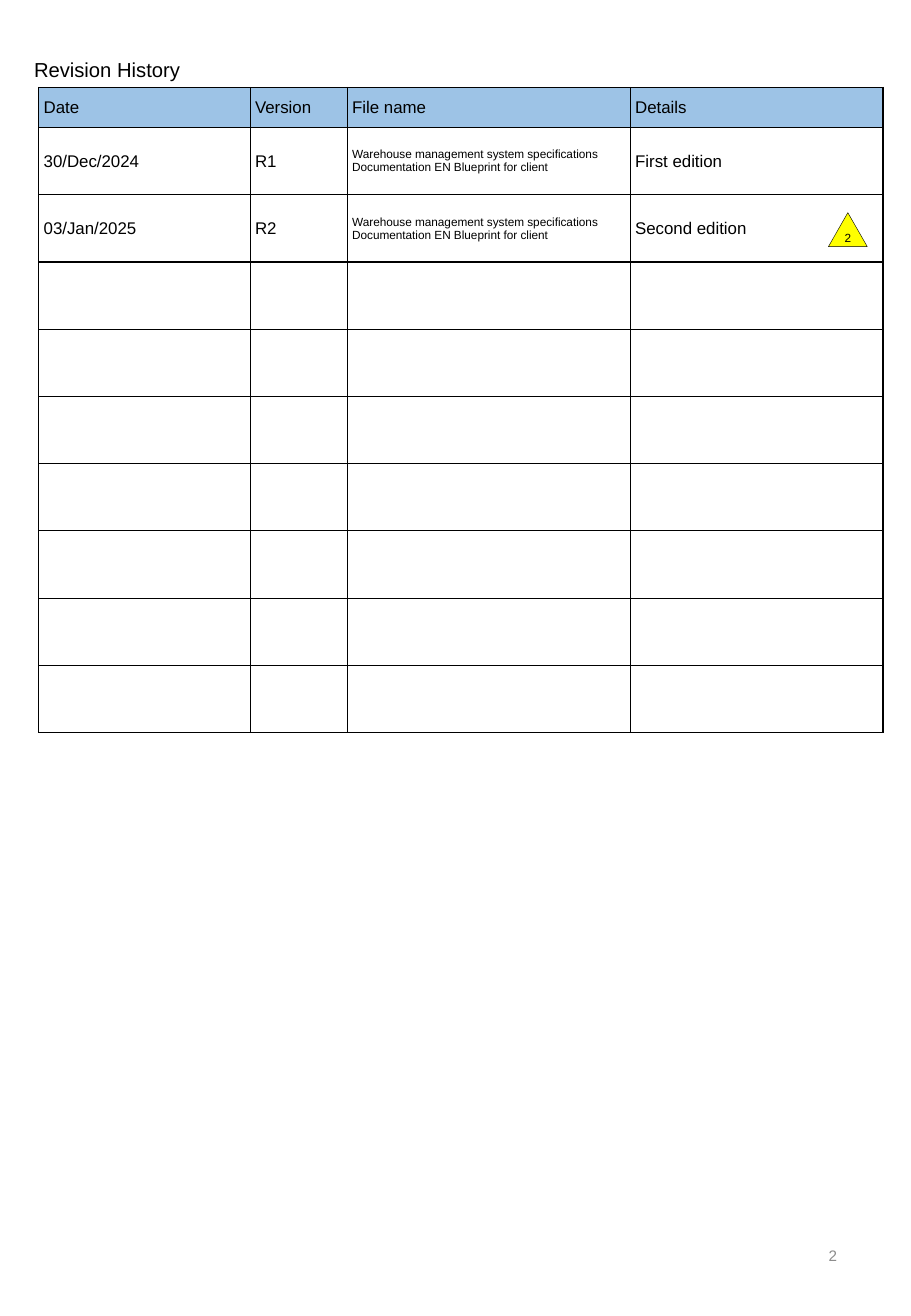
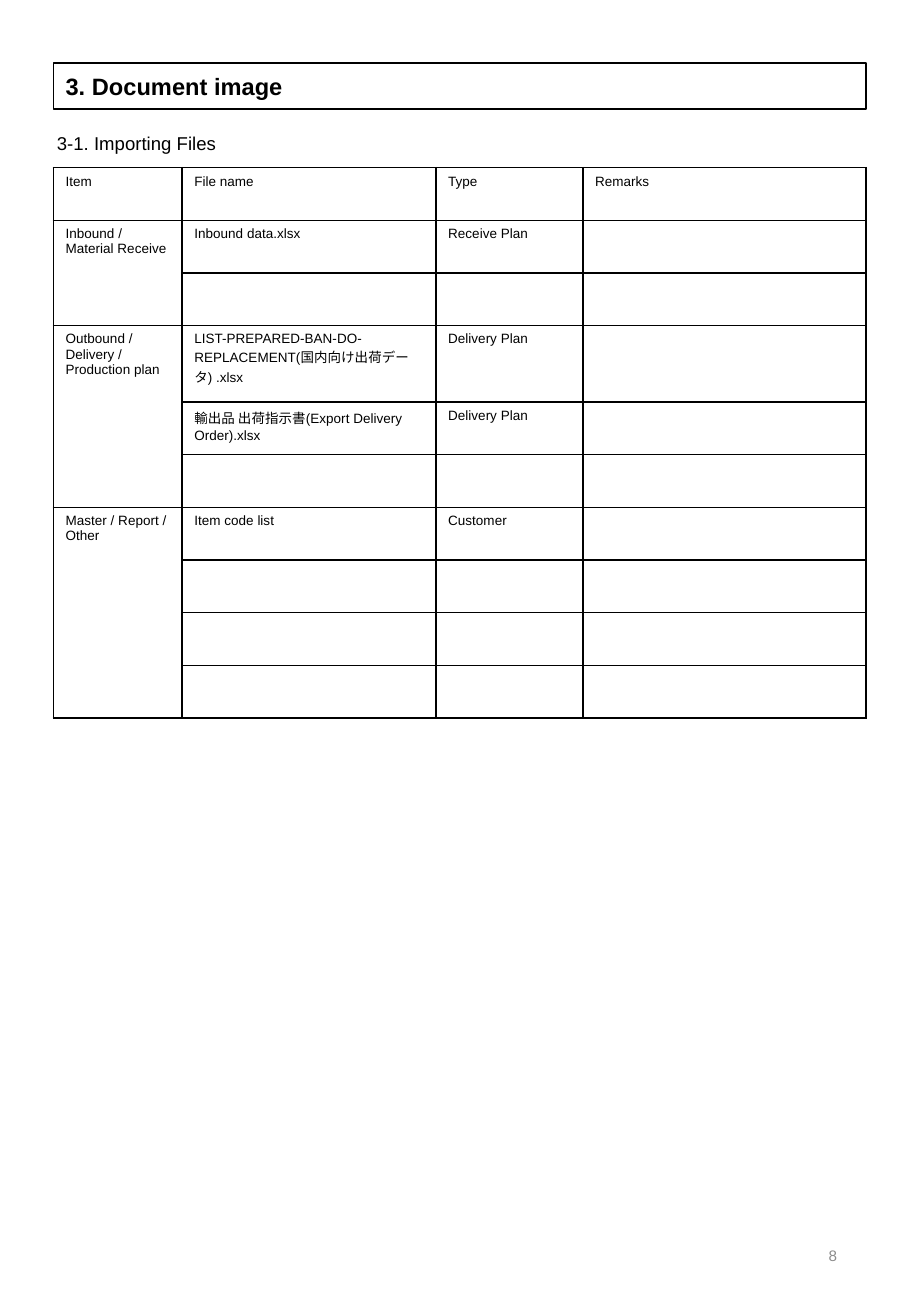
from pptx import Presentation
from pptx.dml.color import RGBColor
from pptx.enum.shapes import MSO_SHAPE
from pptx.enum.text import MSO_ANCHOR, MSO_AUTO_SIZE, PP_ALIGN
from pptx.oxml import parse_xml
from pptx.oxml.ns import nsdecls
from pptx.util import Inches, Pt

TRIANGLE = MSO_SHAPE.ISOSCELES_TRIANGLE
TOP, MIDDLE = MSO_ANCHOR.TOP, MSO_ANCHOR.MIDDLE
LEFT, CENTER, RIGHT = PP_ALIGN.LEFT, PP_ALIGN.CENTER, PP_ALIGN.RIGHT
NO_AUTOFIT = MSO_AUTO_SIZE.NONE

FONT = "Arial"
BLACK, GRAY, BLUE, YELLOW = "000000", "8C8C8C", "9DC3E6", "FFFF00"
TITLE_ONLY = 5
DEFAULT_MARGINS = (0.1, 0.05, 0.1, 0.05)
PAGE_NUMBER_BOX = (5.3, 10.04, 1.69, 0.58)

FILE_NAME = "Warehouse management system specifications Documentation EN Blueprint for client"
REVISIONS = [
    ("Date", "Version", "File name", "Details"),
    ("30/Dec/2024", "R1", FILE_NAME, "First edition"),
    ("03/Jan/2025", "R2", FILE_NAME, "Second edition"),
]
REVISION_ROWS = 10
IMPORT_HEADERS = ("Item", "File name", "Type", "Remarks")
IMPORT_GROUPS = [
    ("Inbound / Material Receive", 2, [("Inbound data.xlsx", "Receive Plan")]),
    ("Outbound / Delivery / Production plan", 3, [
        ("LIST-PREPARED-BAN-DO-REPLACEMENT(国内向け出荷データ) .xlsx", "Delivery Plan"),
        ("輸出品 出荷指示書(Export Delivery Order).xlsx", "Delivery Plan"),
    ]),
    ("Master / Report / Other", 4, [("Item code list", "Customer")]),
]
TALL_ROW = 3


def color(value):
    """Return the colour for a hex string."""
    return RGBColor.from_string(value)


def inches(values):
    """Convert numbers to lengths."""
    return [Inches(value) for value in values]


def place(shape, box):
    """Move and size a shape."""
    shape.left, shape.top, shape.width, shape.height = inches(box)


def write(frame, text, size=10, font_color=BLACK, bold=False, align=LEFT):
    """Write one formatted paragraph into a text frame."""
    paragraph = frame.paragraphs[0]
    paragraph.alignment = align
    run = paragraph.add_run()
    run.text = text
    run.font.name, run.font.size, run.font.bold = FONT, Pt(size), bold
    run.font.color.rgb = color(font_color)


def set_margins(target, margins):
    """Set the inner margins of a text frame or cell."""
    (target.margin_left, target.margin_top,
     target.margin_right, target.margin_bottom) = inches(margins)


def write_box(shape, text, margins=DEFAULT_MARGINS, anchor=MIDDLE, **text_format):
    """Lay out and write the text of a shape."""
    frame = shape.text_frame
    frame.word_wrap = True
    frame.auto_size = NO_AUTOFIT
    frame.vertical_anchor = anchor
    set_margins(frame, margins)
    write(frame, text, **text_format)


def add_text(slide, box, text, **text_format):
    """Add a text box."""
    write_box(slide.shapes.add_textbox(*inches(box)), text, **text_format)


def add_page(presentation, title, title_box, page_number, **title_format):
    """Add a slide with its title and page number."""
    slide = presentation.slides.add_slide(presentation.slide_layouts[TITLE_ONLY])
    place(slide.shapes.title, title_box)
    write_box(slide.shapes.title, title, **title_format)
    add_text(slide, PAGE_NUMBER_BOX, page_number, size=9, font_color=GRAY, align=RIGHT)
    return slide


def set_borders(cell, width):
    """Draw black lines on all sides of a cell."""
    properties = cell._tc.get_or_add_tcPr()
    for side in "LRTB":
        properties.append(parse_xml(
            f'<a:ln{side} {nsdecls("a")} w="{Pt(width)}"><a:solidFill>'
            f'<a:srgbClr val="{BLACK}"/></a:solidFill></a:ln{side}>'))


def add_grid(slide, box, column_widths, row_heights, border):
    """Add an unfilled table with black borders."""
    table = slide.shapes.add_table(
        len(row_heights), len(column_widths), *inches(box)).table
    table.first_row = table.horz_banding = False
    for column, width in zip(table.columns, column_widths):
        column.width = Inches(width)
    for row, height in zip(table.rows, row_heights):
        row.height = Inches(height)
    for cell in table.iter_cells():
        set_borders(cell, border)
        cell.fill.background()
    return table


def add_revision_table(slide, box):
    """Add the revision table and its marker."""
    left, top, width, height = box
    header_height = 0.33
    row_height = (height - header_height) / (REVISION_ROWS - 1)
    heights = [header_height] + [row_height] * (REVISION_ROWS - 1)
    table = add_grid(slide, box, (1.74, 0.8, 2.33, 2.08), heights, 0.75)
    for row, values in enumerate(REVISIONS):
        for column, value in enumerate(values):
            cell = table.cell(row, column)
            cell.vertical_anchor = MIDDLE
            set_margins(cell, (0.04, 0.05, 0.1, 0.05))
            write(cell.text_frame, value, size=7 if value == FILE_NAME else 10)
            if row == 0:
                cell.fill.solid()
                cell.fill.fore_color.rgb = color(BLUE)
    add_revision_marker(slide, (left + width - 0.45, top + 1.03, 0.32, 0.28), "2")


def add_revision_marker(slide, box, number):
    """Add a numbered yellow triangle."""
    marker = slide.shapes.add_shape(TRIANGLE, *inches(box))
    marker.shadow.inherit = False
    marker.fill.solid()
    marker.fill.fore_color.rgb = color(YELLOW)
    marker.line.color.rgb = color(BLACK)
    marker.line.width = Pt(0.25)
    write_box(marker, number, margins=(0, 0, 0, 0), size=7, align=CENTER)


def add_import_table(slide, box):
    """Add the table of files grouped by item."""
    row_count = 1 + sum(span for _, span, _ in IMPORT_GROUPS)
    tall_height = 0.63
    heights = [(box[3] - tall_height) / (row_count - 1)] * row_count
    heights[TALL_ROW] = tall_height
    table = add_grid(slide, box, (1.06, 2.09, 1.21, 2.33), heights, 1)
    for column, header in enumerate(IMPORT_HEADERS):
        write(table.cell(0, column).text_frame, header, size=8)
    first_row = 1
    for item, span, files in IMPORT_GROUPS:
        item_cell = table.cell(first_row, 0)
        item_cell.merge(table.cell(first_row + span - 1, 0))
        write(item_cell.text_frame, item, size=8)
        for row, values in enumerate(files, first_row):
            for column, value in enumerate(values, 1):
                write(table.cell(row, column).text_frame, value, size=8)
        first_row += span


def add_revision_slide(presentation):
    """Add the revision history slide."""
    slide = add_page(presentation, "Revision History", (0.12, 0.42, 1.56, 0.3), "2",
                     size=12, margins=(0.16, 0.05, 0, 0.05))
    add_revision_table(slide, (0.32, 0.72, 6.95, 5.31))


def add_document_slide(presentation):
    """Add the document image slide."""
    slide = add_page(presentation, "3. Document image", (0.44, 0.52, 6.69, 0.38), "8",
                     size=14, bold=True)
    slide.shapes.title.line.color.rgb = color(BLACK)
    slide.shapes.title.line.width = Pt(1)
    add_text(slide, (0.37, 1.04, 4.59, 0.29), "3-1. Importing Files", size=11, anchor=TOP)
    add_import_table(slide, (0.44, 1.38, 6.69, 4.53))


def main():
    """Build and save the presentation."""
    presentation = Presentation()
    presentation.slide_width, presentation.slide_height = inches((7.5, 10.83))
    add_revision_slide(presentation)
    add_document_slide(presentation)
    presentation.save("out.pptx")


if __name__ == "__main__":
    main()
